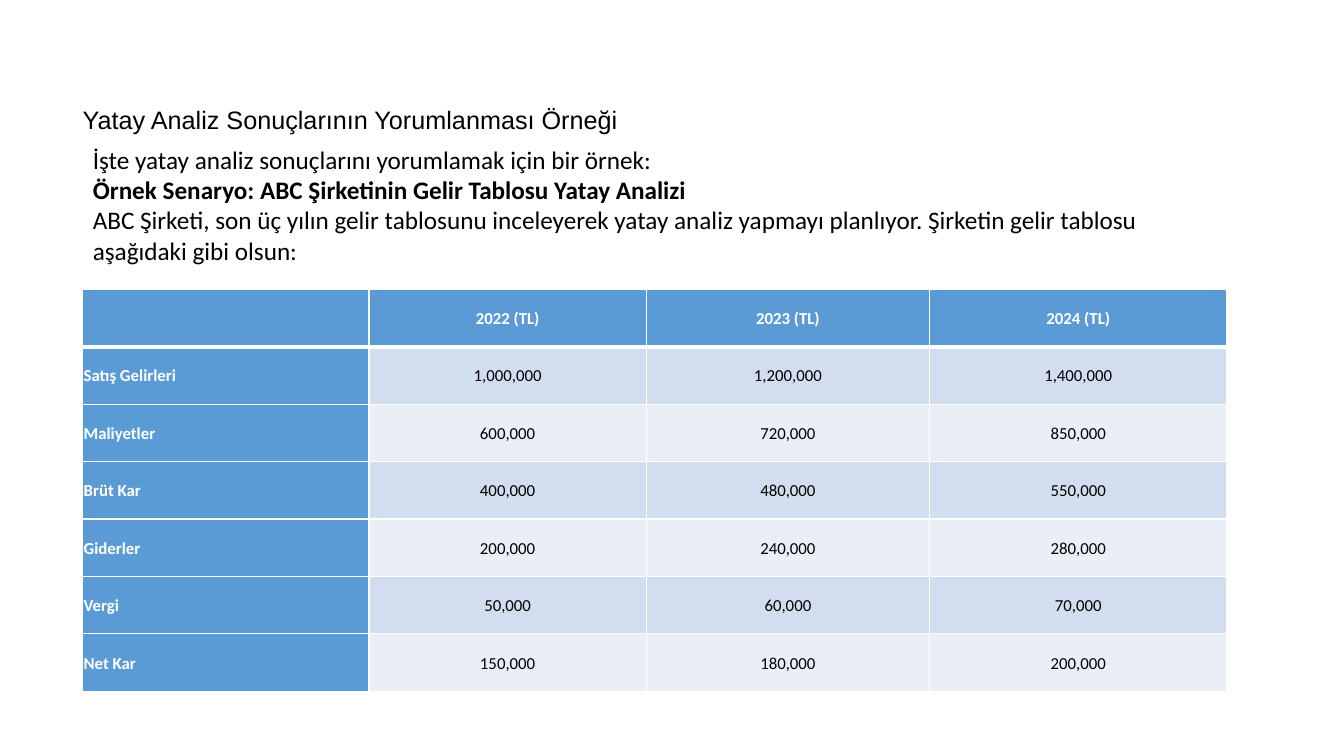
from lxml import etree
from pptx import Presentation
from pptx.dml.color import RGBColor
from pptx.enum import text
from pptx.oxml import ns
from pptx.util import Inches, Pt

COLORS = {
    "header": "5B9BD5",
    "band_dark": "D2DEEF",
    "band_light": "EAEFF7",
    "white": "FFFFFF",
    "black": "000000",
}
TITLE = "Yatay Analiz Sonuçlarının Yorumlanması Örneği"
SCENARIO = [
    ("İşte yatay analiz sonuçlarını yorumlamak için bir örnek:", False),
    ("Örnek Senaryo: ABC Şirketinin Gelir Tablosu Yatay Analizi", True),
    ("ABC Şirketi, son üç yılın gelir tablosunu inceleyerek yatay analiz yapmayı "
     "planlıyor. Şirketin gelir tablosu aşağıdaki gibi olsun:", False),
]
INCOME_STATEMENT = [
    ["", "2022 (TL)", "2023 (TL)", "2024 (TL)"],
    ["Satış Gelirleri", "1,000,000", "1,200,000", "1,400,000"],
    ["Maliyetler", "600,000", "720,000", "850,000"],
    ["Brüt Kar", "400,000", "480,000", "550,000"],
    ["Giderler", "200,000", "240,000", "280,000"],
    ["Vergi", "50,000", "60,000", "70,000"],
    ["Net Kar", "150,000", "180,000", "200,000"],
]
COLUMN_WIDTHS = [2.84, 2.75, 2.81, 2.95]
ROW_HEIGHT = 0.57


def color(name):
    return RGBColor.from_string(COLORS[name])


def style_paragraph(paragraph, font_name, size, color_name, bold=False,
                    align=text.PP_ALIGN.LEFT, spacing=1.0):
    paragraph.alignment = align
    paragraph.line_spacing = spacing
    paragraph.space_before = Pt(0)
    font = paragraph.font
    font.name, font.size, font.bold = font_name, Pt(size), bold
    font.color.rgb = color(color_name)


def fill_placeholder(shape, box, lines, font_name):
    shape.left, shape.top, shape.width, shape.height = map(Inches, box)
    frame = shape.text_frame
    frame.word_wrap = True
    frame.auto_size = text.MSO_AUTO_SIZE.NONE
    frame.vertical_anchor = text.MSO_ANCHOR.TOP
    frame.text = "\n".join(line for line, _ in lines)
    for paragraph, (_, bold) in zip(frame.paragraphs, lines):
        style_paragraph(paragraph, font_name, 18, "black", bold)
        # No bullet and no hanging indent
        properties = paragraph._p.get_or_add_pPr()
        properties.set("marL", "0")
        properties.set("indent", "0")
        bullet = etree.Element(ns.qn("a:buNone"))
        properties.find(ns.qn("a:defRPr")).addprevious(bullet)


def set_borders(cell, widths):
    """Draw white borders; widths are in points for left, right, top, bottom."""
    properties = cell._tc.get_or_add_tcPr()
    for index, (side, width) in enumerate(zip("LRTB", widths)):
        line = etree.Element(ns.qn(f"a:ln{side}"), w=str(Pt(width)))
        fill = etree.SubElement(line, ns.qn("a:solidFill"))
        etree.SubElement(fill, ns.qn("a:srgbClr"), val=COLORS["white"])
        properties.insert(index, line)


def format_cell(cell, value, row, column):
    heading = row == 0 or column == 0
    band = "band_dark" if row % 2 else "band_light"
    cell.fill.solid()
    cell.fill.fore_color.rgb = color("header" if heading else band)
    cell.vertical_anchor = text.MSO_ANCHOR.MIDDLE
    cell.margin_left = cell.margin_right = Inches(0.01)
    cell.margin_top = cell.margin_bottom = Inches(0.01)
    cell.text = value
    style_paragraph(
        cell.text_frame.paragraphs[0], "Calibri", 12,
        "white" if heading else "black", heading,
        text.PP_ALIGN.CENTER if column else text.PP_ALIGN.LEFT, 1.07)
    set_borders(cell, (1, 1, 3 if row == 1 else 1, 3 if row == 0 else 1))


def add_income_table(slide):
    table = slide.shapes.add_table(
        len(INCOME_STATEMENT), len(COLUMN_WIDTHS), Inches(0.82), Inches(2.87),
        Inches(sum(COLUMN_WIDTHS)), Inches(ROW_HEIGHT * len(INCOME_STATEMENT))).table
    for column, width in zip(table.columns, COLUMN_WIDTHS):
        column.width = Inches(width)
    for row, values in enumerate(INCOME_STATEMENT):
        for column, value in enumerate(values):
            format_cell(table.cell(row, column), value, row, column)


def main():
    presentation = Presentation()
    presentation.slide_width = Inches(13.33)
    presentation.slide_height = Inches(7.5)
    slide = presentation.slides.add_slide(presentation.slide_layouts[1])

    # Title and scenario
    fill_placeholder(slide.shapes.title, (0.72, 0.98, 6.78, 0.4),
                     [(TITLE, False)], "Arial")
    fill_placeholder(slide.placeholders[1], (0.82, 1.38, 10.9, 1.31),
                     SCENARIO, "Calibri")

    # Three-year income statement
    add_income_table(slide)
    presentation.save("out.pptx")


if __name__ == "__main__":
    main()
